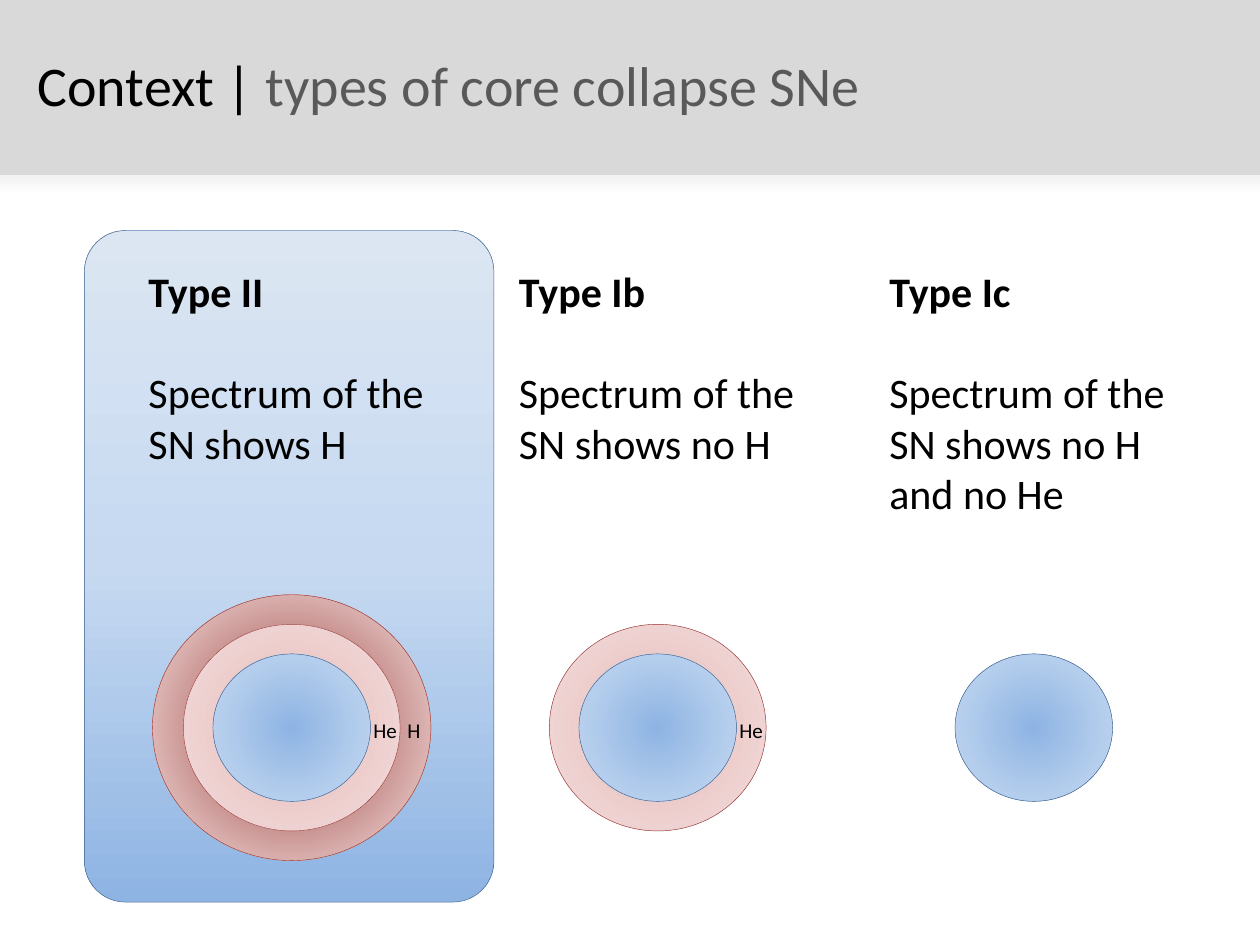
from lxml import etree
from pptx import Presentation
from pptx.dml.color import RGBColor
from pptx.enum.shapes import MSO_SHAPE as Shape
from pptx.enum.text import MSO_AUTO_SIZE as AutoSize
from pptx.oxml import parse_xml
from pptx.oxml.ns import nsdecls, qn
from pptx.util import Inches, Pt

BLUE, NAVY, RED = "8EB4E3", "3A5F8C", "953735"
PALE_BLUE, PALE_RED = "C6D9F1", "F2DCDB"
STAR_MIDDLE = 5.775
LABEL_HEIGHT = 0.3

# name: width, height, inner colour, outer colour, line, label offset, label width
LAYERS = {
    "H": (2.21, 2.11, RED, PALE_RED, RED, 0.82, 0.31),
    "He": (1.72, 1.64, "E6B9B8", PALE_RED, RED, 0.55, 0.39),
    "": (1.25, 1.17, BLUE, PALE_BLUE, NAVY, 0, 0),
}
# heading, description, text height, centre of the star, layers
TYPES = [
    ("Type II", "Spectrum of the SN shows H", 1.72, 2.315, ["H", "He", ""]),
    ("Type Ib", "Spectrum of the SN shows no H", 1.72, 5.22, ["He", ""]),
    ("Type Ic", "Spectrum of the SN shows no H and no He", 2.12, 8.205, [""]),
]


def color(value):
    return RGBColor.from_string(value)


def add_box(shapes, kind, box, fill=None, line=None):
    shape = shapes.add_shape(kind, *map(Inches, box))
    shape.shadow.inherit = False
    if fill:
        shape.fill.solid()
        shape.fill.fore_color.rgb = color(fill)
    if line:
        shape.line.color.rgb = color(line)
        shape.line.width = Pt(0.25)
    else:
        shape.line.fill.background()
    return shape


def set_gradient(shape, stops, angle=None):
    """Fill linearly at a clockwise angle, or from the centre outwards without one."""
    gradient = parse_xml(f'<a:gradFill {nsdecls("a")} rotWithShape="1"/>')
    stop_list = etree.SubElement(gradient, qn("a:gsLst"))
    for percent, value in stops:
        stop = etree.SubElement(stop_list, qn("a:gs"), pos=str(percent * 1000))
        etree.SubElement(stop, qn("a:srgbClr"), val=value)
    if angle is None:
        radial = etree.SubElement(gradient, qn("a:path"), path="circle")
        sides = dict.fromkeys("ltrb", "50000")
        etree.SubElement(radial, qn("a:fillToRect"), **sides)
    else:
        etree.SubElement(gradient, qn("a:lin"), ang=str(angle * 60000), scaled="0")
    shape.fill.background()
    properties = shape.fill._xPr
    properties.replace(properties.find(qn("a:noFill")), gradient)


def add_text(shapes, box, wrap=True):
    frame = shapes.add_textbox(*map(Inches, box)).text_frame
    for name, value in {"word_wrap": wrap, "auto_size": AutoSize.SHAPE_TO_FIT_TEXT}.items():
        setattr(frame, name, value)
    return frame


def add_run(paragraph, text, size, value="000000", bold=False):
    run = paragraph.add_run()
    run.text = text
    for name, setting in {"name": "Calibri", "size": Pt(size), "bold": bold}.items():
        setattr(run.font, name, setting)
    run.font.color.rgb = color(value)


def add_highlight(shapes, box):
    panel = add_box(shapes, Shape.ROUNDED_RECTANGLE, box, line=NAVY)
    panel.adjustments[0] = 0.1
    set_gradient(panel, [(0, BLUE), (50, PALE_BLUE), (100, "DCE6F2")], 270)


def add_header(shapes, left, top, width, height):
    add_box(shapes, Shape.RECTANGLE, (left, top, width, height), "D9D9D9")
    title = add_text(shapes, (left + 0.2, top + 0.35, width - 0.39, 0.64)).paragraphs[0]
    add_run(title, "Context | ", 32)
    add_run(title, "types of core collapse SNe", 32, "595959")
    fade = add_box(shapes, Shape.RECTANGLE, (left, top + height, width, 0.16))
    set_gradient(fade, [(0, "F2F2F2"), (100, "FFFFFF")], 90)


def add_description(shapes, box, heading, description):
    frame = add_text(shapes, box)
    add_run(frame.paragraphs[0], heading, 24, bold=True)
    frame.paragraphs[0].space_after = Pt(29)
    add_run(frame.add_paragraph(), description, 24)


def add_star(shapes, center, middle, names):
    """Draw the layers from the outside in, then label the shells."""
    parts = shapes.add_group_shape().shapes if len(names) > 1 else shapes
    for name in names:
        width, height, inner, outer, line, _, _ = LAYERS[name]
        box = (center - width / 2, middle - height / 2, width, height)
        layer = add_box(parts, Shape.OVAL, box, line=line)
        set_gradient(layer, [(0, inner), (95, outer)])
    for name in filter(None, names):
        offset, width = LAYERS[name][-2:]
        box = (center + offset, middle - 0.13, width, LABEL_HEIGHT)
        add_run(add_text(parts, box, wrap=False).paragraphs[0], name, 12)


def main():
    deck = Presentation()
    deck.slide_width, deck.slide_height = Inches(10), Inches(7.5)
    shapes = deck.slides.add_slide(deck.slide_layouts[6]).shapes
    add_highlight(shapes, (0.67, 1.83, 3.25, 5.33))
    add_header(shapes, 0, 0, 10, 1.39)
    for column, (heading, description, height, center, names) in enumerate(TYPES):
        add_star(shapes, center, STAR_MIDDLE, names)
        box = (1.08 + 2.94 * column, 2.06, 2.49, height)
        add_description(shapes, box, heading, description)
    deck.save("out.pptx")


if __name__ == "__main__":
    main()
